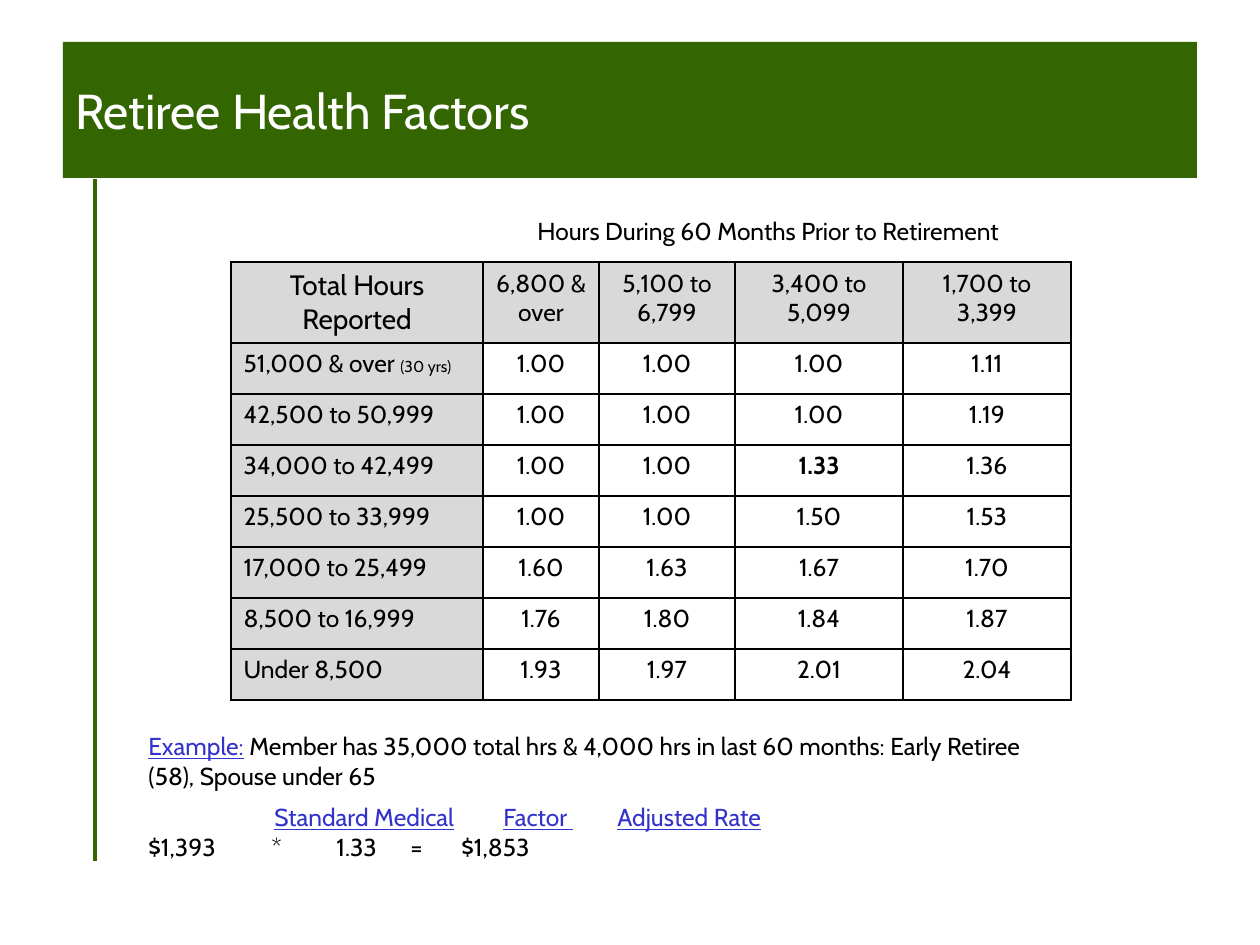
import dataclasses
import typing

import pptx
import pptx.dml.color
import pptx.enum.shapes
import pptx.enum.text
import pptx.oxml
import pptx.oxml.ns
import pptx.util

EMU_PER_PX = 914400 / 126
GREEN, BLUE, BLACK, WHITE, GREY = "336600", "3333CC", "000000", "FFFFFF", "D9D9D9"
ALIGN = pptx.enum.text.PP_ALIGN


@dataclasses.dataclass(frozen=True)
class Span:
    text: str
    size: float = 14
    color: str = BLACK
    bold: bool = False
    underline: bool = False


@dataclasses.dataclass(frozen=True)
class Line:
    spans: tuple[Span, ...]
    align: typing.Any = ALIGN.LEFT
    before: float = 0
    tabs: tuple[int, ...] = ()


@dataclasses.dataclass(frozen=True)
class Band:
    label: tuple[Span, ...]
    factors: tuple[str, ...]


def px(length: int) -> pptx.util.Emu:
    return pptx.util.Emu(round(length * EMU_PER_PX))


def rgb(color: str) -> pptx.dml.color.RGBColor:
    return pptx.dml.color.RGBColor.from_string(color)


def paint(fill, color: str) -> None:
    fill.solid()
    fill.fore_color.rgb = rgb(color)


def set_all(target, values: dict) -> None:
    for name, value in values.items():
        setattr(target, name, value)


def write(frame, lines: typing.Sequence[Line]) -> None:
    for index, line in enumerate(lines):
        paragraph = frame.paragraphs[0] if index == 0 else frame.add_paragraph()
        set_all(paragraph, {"alignment": line.align, "space_before": pptx.util.Pt(line.before)})
        if line.tabs:
            properties = paragraph._p.get_or_add_pPr()
            stops = pptx.oxml.ns.qn("a:tabLst")
            stop_list = properties.makeelement(stops, {})
            properties.append(stop_list)
            for position in line.tabs:
                stop = stop_list.makeelement(
                    pptx.oxml.ns.qn("a:tab"), {"pos": str(px(position)), "algn": "l"}
                )
                stop_list.append(stop)
        for span in line.spans:
            run = paragraph.add_run()
            run.text = span.text
            set_all(run.font, {
                "name": "Cabin",
                "size": pptx.util.Pt(span.size),
                "bold": span.bold,
                "underline": span.underline,
            })
            run.font.color.rgb = rgb(span.color)


def add_text(slide, left: int, top: int, width: int, height: int, lines: typing.Sequence[Line]) -> None:
    frame = slide.shapes.add_textbox(px(left), px(top), px(width), px(height)).text_frame
    frame.word_wrap = True
    write(frame, lines)


def add_banner(slide, title: str) -> None:
    rule = slide.shapes.add_connector(
        pptx.enum.shapes.MSO_CONNECTOR.STRAIGHT, px(95), px(179), px(95), px(861)
    )
    rule.line.color.rgb = rgb(GREEN)
    rule.line.width = pptx.util.Pt(2)
    rule._element.spPr.append(
        rule._element.spPr.makeelement(pptx.oxml.ns.qn("a:effectLst"), {})
    )
    banner = slide.shapes.add_shape(
        pptx.enum.shapes.MSO_SHAPE.RECTANGLE, px(63), px(42), px(1134), px(136)
    )
    banner.shadow.inherit = False
    paint(banner.fill, GREEN)
    banner.line.fill.background()
    set_all(banner.text_frame, {
        "word_wrap": True,
        "vertical_anchor": pptx.enum.text.MSO_ANCHOR.MIDDLE,
    })
    write(banner.text_frame, [Line((Span(title, 28, WHITE),))])


def fill_cell(cell, line: Line, color: str) -> None:
    properties = cell._tc.get_or_add_tcPr()
    namespace = pptx.oxml.ns.nsdecls("a")
    for side in ("lnL", "lnR", "lnT", "lnB"):
        properties.append(pptx.oxml.parse_xml(
            f'<a:{side} {namespace} w="12700"><a:solidFill>'
            f'<a:srgbClr val="{BLACK}"/></a:solidFill></a:{side}>'
        ))
    paint(cell.fill, color)
    write(cell.text_frame, [line])


def add_factor_table(slide, headings: typing.Sequence[Span], bands: typing.Sequence[Band]) -> None:
    widths = (252, 116, 136, 168, 168)
    heights = (81,) + (51,) * len(bands)
    table = slide.shapes.add_table(
        len(heights), len(widths), px(231), px(262), px(sum(widths)), px(sum(heights))
    ).table
    for column, width in zip(table.columns, widths):
        column.width = px(width)
    for row, height in zip(table.rows, heights):
        row.height = px(height)
    for column, heading in enumerate(headings):
        fill_cell(table.cell(0, column), Line((heading,), ALIGN.CENTER), GREY)
    for row, band in enumerate(bands, 1):
        fill_cell(table.cell(row, 0), Line(band.label), GREY)
        for column, factor in enumerate(band.factors, 1):
            applied = Span(factor, bold=factor == "1.33")
            fill_cell(table.cell(row, column), Line((applied,), ALIGN.CENTER), WHITE)


HEADINGS = (
    Span("Total Hours Reported", 16),
    Span("6,800 & over"),
    Span("5,100 to 6,799"),
    Span("3,400 to 5,099"),
    Span("1,700 to 3,399"),
)
BANDS = (
    Band((Span("51,000 & over "), Span("(30 yrs)", 9)), ("1.00", "1.00", "1.00", "1.11")),
    Band((Span("42,500 to 50,999"),), ("1.00", "1.00", "1.00", "1.19")),
    Band((Span("34,000 to 42,499"),), ("1.00", "1.00", "1.33", "1.36")),
    Band((Span("25,500 to 33,999"),), ("1.00", "1.00", "1.50", "1.53")),
    Band((Span("17,000 to 25,499"),), ("1.60", "1.63", "1.67", "1.70")),
    Band((Span("8,500 to 16,999"),), ("1.76", "1.80", "1.84", "1.87")),
    Band((Span("Under 8,500"),), ("1.93", "1.97", "2.01", "2.04")),
)
RATE_LABELS = tuple(
    span
    for label in ("Standard Medical", "Factor ", "Adjusted Rate")
    for span in (Span("\t"), Span(label, color=BLUE, underline=True))
)
EXAMPLE = (
    Line((
        Span("Example:", color=BLUE, underline=True),
        Span(" Member has 35,000 total hrs & 4,000 hrs in last 60 months: "
             "Early Retiree (58), Spouse under 65"),
    )),
    Line(RATE_LABELS, before=7, tabs=(126, 355, 469)),
    Line((Span("$1,393\t*\t1.33\t=\t$1,853"),), tabs=(123, 188, 262, 313)),
)


def main() -> None:
    deck = pptx.Presentation()
    set_all(deck, {"slide_width": px(1260), "slide_height": px(945)})
    slide = deck.slides.add_slide(deck.slide_layouts[6])
    add_banner(slide, "Retiree Health Factors")
    add_text(slide, 525, 210, 546, 42, [Line((Span("Hours During 60 Months Prior to Retirement"),))])
    add_factor_table(slide, HEADINGS, BANDS)
    add_text(slide, 136, 725, 945, 146, EXAMPLE)
    deck.save("out.pptx")


if __name__ == "__main__":
    main()
